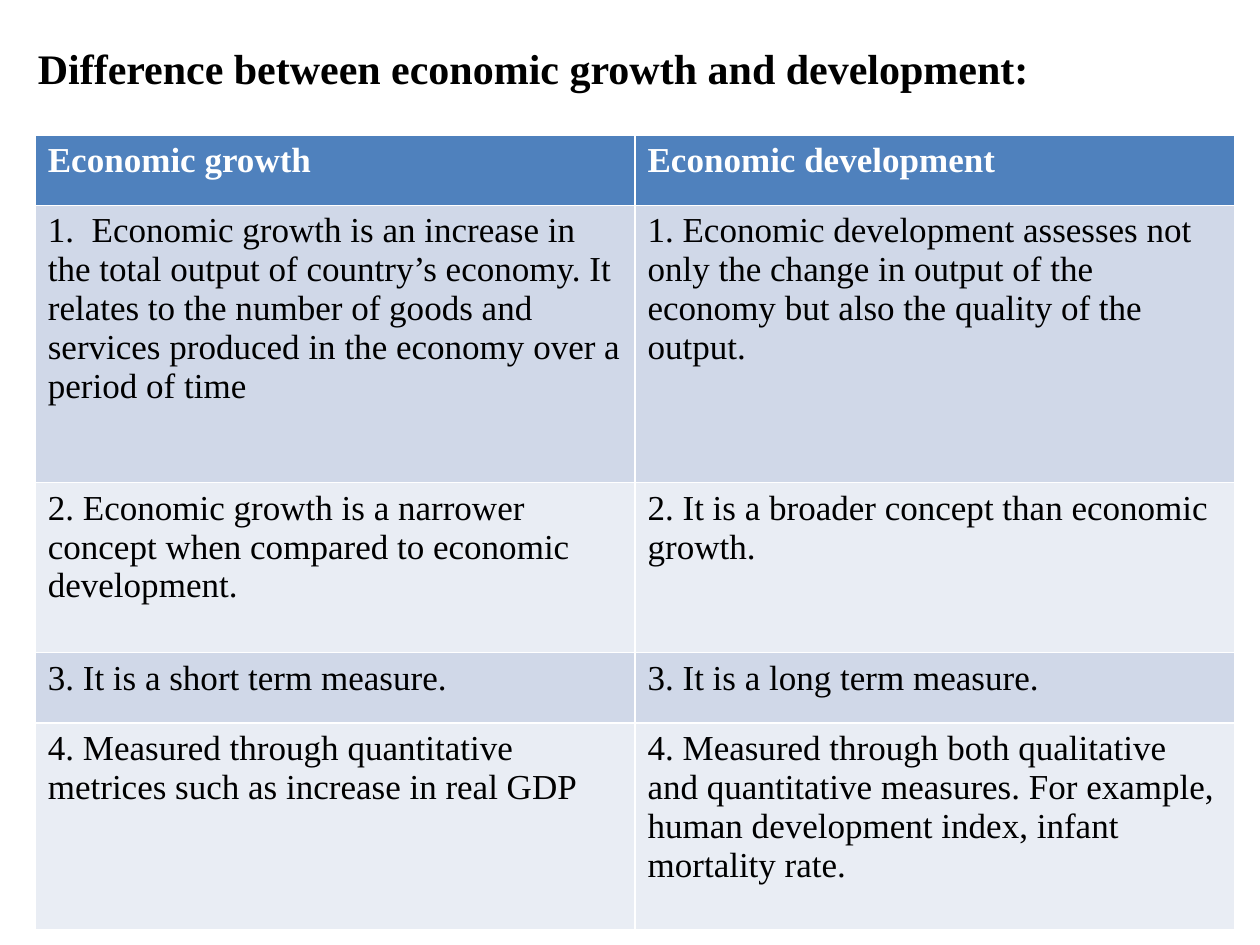
from pptx import Presentation
from pptx.dml.color import RGBColor
from pptx.enum.text import MSO_ANCHOR, PP_ALIGN
from pptx.util import Inches, Pt

HEADING = "Difference between economic growth and development:"
COMPARISON = [
    ("Economic growth", "Economic development"),
    ("1.  Economic growth is an increase in the total output of country’s economy. "
     "It relates to the number of goods and services produced in the economy over a period of time",
     "1. Economic development assesses not only the change in output of the economy "
     "but also the quality of the output."),
    ("2. Economic growth is a narrower concept when compared to economic development.",
     "2. It is a broader concept than economic growth."),
    ("3. It is a short term measure.", "3. It is a long term measure."),
    ("4. Measured through quantitative metrices such as increase in real GDP",
     "4. Measured through both qualitative and quantitative measures. For example, "
     "human development index, infant mortality rate."),
]
ROW_HEIGHTS = [0.56, 2.2, 1.35, 0.56, 1.64]
COLUMN_WIDTH = 4.76
HEADER_FILL = "4F81BD"
BAND_FILLS = ["E9EDF4", "D0D8E8"]


def color(hex_code):
    return RGBColor.from_string(hex_code)


def style(paragraph, size, hex_code, bold):
    font = paragraph.font
    font.name = "Times New Roman"
    font.size = Pt(size)
    font.bold = bold
    font.color.rgb = color(hex_code)


def add_heading(slide):
    heading = slide.shapes.title
    heading.left, heading.top = Inches(0.2), Inches(0.29)
    heading.width, heading.height = Inches(9.53), Inches(0.7)
    frame = heading.text_frame
    frame.text = HEADING
    frame.vertical_anchor = MSO_ANCHOR.TOP
    frame.paragraphs[0].alignment = PP_ALIGN.LEFT
    style(frame.paragraphs[0], 24, "000000", True)


def add_comparison(slide):
    columns = len(COMPARISON[0])
    table = slide.shapes.add_table(
        len(COMPARISON), columns, Inches(0.28), Inches(1.07),
        Inches(COLUMN_WIDTH * columns), Inches(sum(ROW_HEIGHTS))).table
    for column in table.columns:
        column.width = Inches(COLUMN_WIDTH)
    for index, (texts, height) in enumerate(zip(COMPARISON, ROW_HEIGHTS)):
        is_header = index == 0
        row = table.rows[index]
        row.height = Inches(height)
        for cell, text in zip(row.cells, texts):
            cell.text = text
            cell.fill.solid()
            cell.fill.fore_color.rgb = color(HEADER_FILL if is_header else BAND_FILLS[index % 2])
            style(cell.text_frame.paragraphs[0], 20, "FFFFFF" if is_header else "000000", is_header)


def main():
    """Build the slide comparing economic growth and development."""
    deck = Presentation()
    deck.slide_width, deck.slide_height = Inches(10), Inches(7.5)
    slide = deck.slides.add_slide(deck.slide_layouts[5])
    add_heading(slide)
    add_comparison(slide)
    deck.save("out.pptx")


if __name__ == "__main__":
    main()
